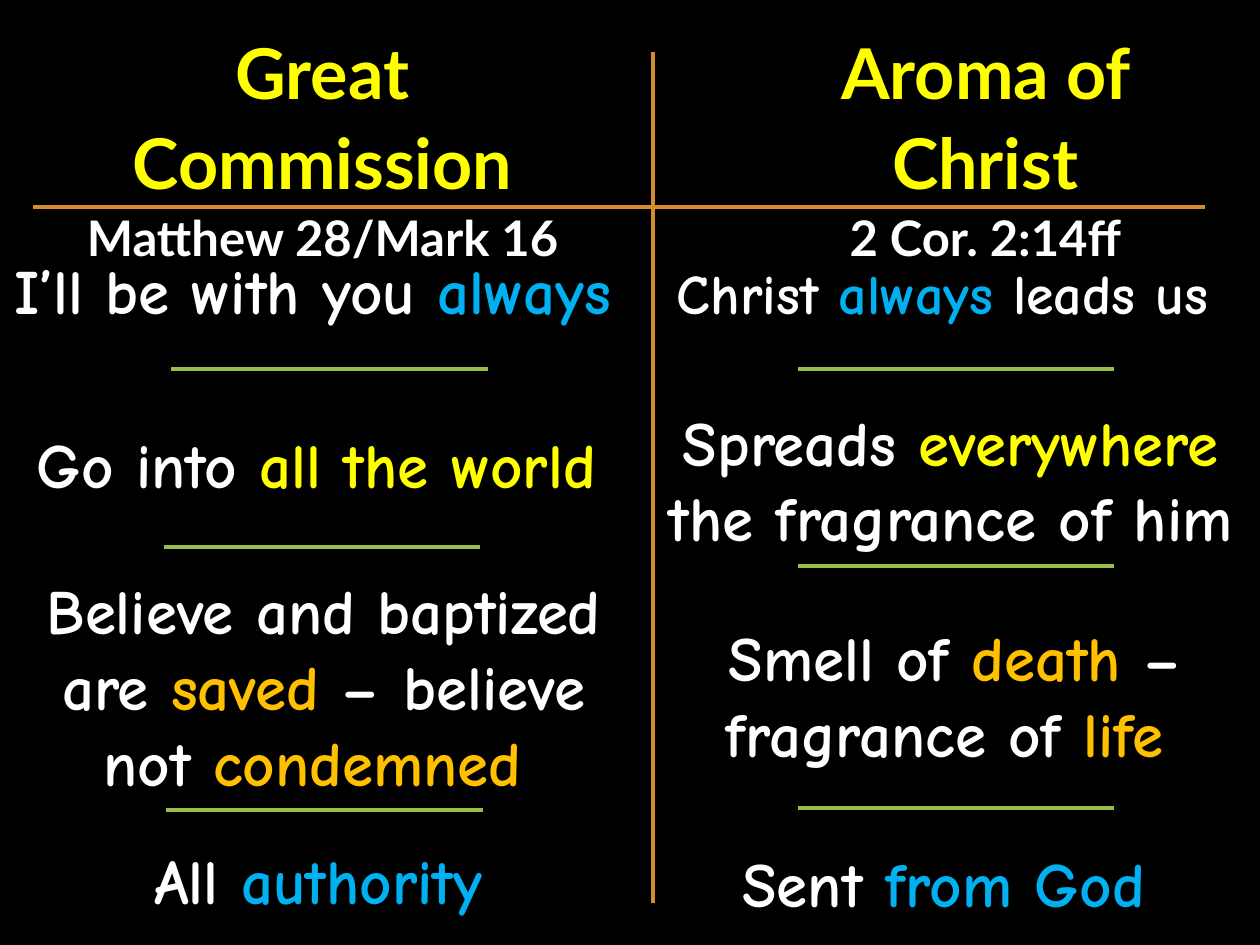
from pptx import Presentation
from pptx.dml.color import RGBColor
from pptx.enum.shapes import MSO_CONNECTOR
from pptx.enum.text import MSO_AUTO_SIZE, PP_ALIGN
from pptx.oxml.ns import qn
from pptx.util import Inches, Pt
from lxml import etree

WHITE, YELLOW, BLUE, GOLD = "FFFFFF", "FFFF00", "00B0F0", "FFC000"
ORANGE, GREEN = "D58C2E", "97BE49"


def color(hex_code):
    return RGBColor.from_string(hex_code)


def add_text(box, paragraphs, font_name, line_spacing=None):
    """Each paragraph is (size, [(text, color), ...])."""
    frame = slide.shapes.add_textbox(*[Inches(v) for v in box]).text_frame
    frame.word_wrap = True
    frame.auto_size = MSO_AUTO_SIZE.SHAPE_TO_FIT_TEXT
    for i, (size, runs) in enumerate(paragraphs):
        paragraph = frame.add_paragraph() if i else frame.paragraphs[0]
        paragraph.alignment = PP_ALIGN.CENTER
        paragraph.line_spacing = line_spacing
        for text, hex_code in runs:
            run = paragraph.add_run()
            run.text = text
            run.font.color.rgb = color(hex_code)
            for name, value in {"name": font_name, "size": Pt(size), "bold": True}.items():
                setattr(run.font, name, value)


prs = Presentation()
prs.slide_width, prs.slide_height = Inches(10), Inches(7.5)
slide = prs.slides.add_slide(prs.slide_layouts[6])
slide.background.fill.solid()
slide.background.fill.fore_color.rgb = color("000000")

# Column headings with their Bible references
headings = [
    ((0.26, 0.14, 4.6, 1.32), "Great Commission", "Matthew 28/Mark 16"),
    ((5.82, 0.14, 4, 1.32), "Aroma of Christ", "2 Cor. 2:14ff"),
]
for box, title, reference in headings:
    add_text(box, [(40, [(title, YELLOW)]), (28, [(reference, WHITE)])], "Lato", 1.07)

# Parallel statements, left and right column in turn
statements = [
    ((0.01, 1.95, 5.13, 0.71), 36, [("I’ll be with you ", WHITE), ("always ", BLUE)]),
    ((5.17, 2, 4.78, 0.64), 32,
     [("Christ ", WHITE), ("always ", BLUE), ("leads us ", WHITE)]),
    ((0.05, 3.33, 5.1, 0.71), 36, [("Go into ", WHITE), ("all the world ", YELLOW)]),
    ((5.18, 3.15, 4.73, 1.31), 36,
     [("Spreads ", WHITE), ("everywhere", YELLOW), (" the fragrance of him", WHITE)]),
    ((-0.02, 4.49, 5.18, 1.92), 36,
     [("Believe and baptized are ", WHITE), ("saved ", GOLD),
      ("– believe not ", WHITE), ("condemned ", GOLD)]),
    ((5.22, 4.86, 4.73, 1.31), 36,
     [("Smell of ", WHITE), ("death ", GOLD), ("– fragrance of ", WHITE), ("life ", GOLD)]),
    ((0.05, 6.63, 5.13, 0.71), 36, [("All ", WHITE), ("authority ", BLUE)]),
    ((5.18, 6.65, 4.62, 0.71), 36, [("Sent ", WHITE), ("from God", BLUE)]),
]
for box, size, runs in statements:
    add_text(box, [(size, runs)], "Comic Neue")

# Orange cross between the columns, green rules between the statements
rule_width = 2.51
rules = [(5.18, 0.41, 5.18, 7.17, ORANGE), (9.56, 1.64, 0.26, 1.64, ORANGE)]
for left, y in [(1.36, 2.93), (6.33, 2.93), (1.3, 4.34),
                (6.33, 4.49), (1.32, 6.43), (6.33, 6.41)]:
    rules.append((left + rule_width, y, left, y, GREEN))
for *ends, hex_code in rules:
    rule = slide.shapes.add_connector(MSO_CONNECTOR.STRAIGHT, *[Inches(v) for v in ends])
    rule.line.color.rgb = color(hex_code)
    rule.line.width = Pt(2.25)
    etree.SubElement(rule._element.spPr, qn("a:effectLst"))

prs.save("out.pptx")
